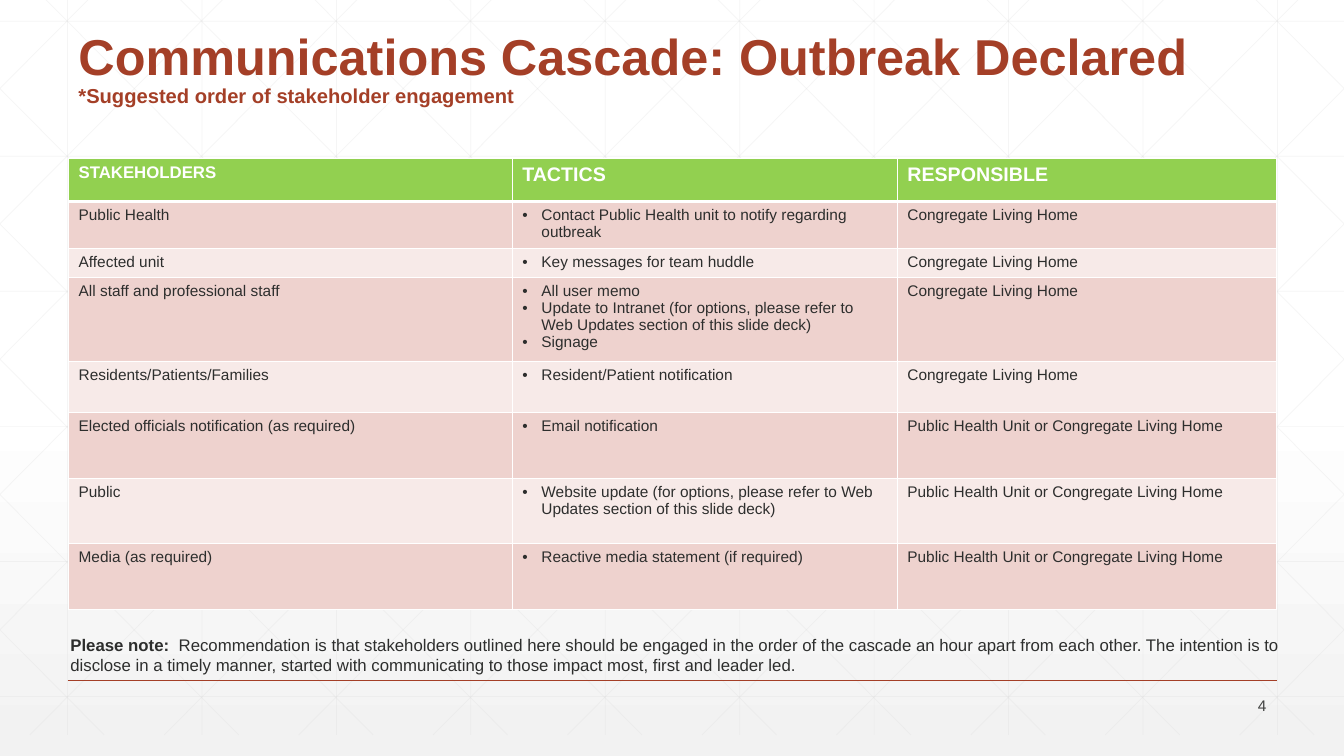
import pptx
import pptx.dml.color
import pptx.enum.shapes
import pptx.enum.text
import pptx.oxml
import pptx.oxml.ns
import pptx.util
from pptx.util import Inches

COLORS = {
    "rust": "A43F27", "green": "92D050", "white": "FFFFFF",
    "band_dark": "EED2CE", "band_light": "F7EAE8",
    "text": "2D2E2D", "number": "424342", "grid": "D9D9D9", "shade": "F2F2F2",
}
SLIDE_W, SLIDE_H = 13.33, 7.5
STEP = 4 / 3
LEFT, RIGHT = 0.67, 12.67
ANCHOR = pptx.enum.text.MSO_ANCHOR
NS = pptx.oxml.ns.nsdecls("a")

HEADER = [("STAKEHOLDERS", 12), ("TACTICS", 14), ("RESPONSIBLE", 14)]
HOME = "Congregate Living Home"
UNIT_OR_HOME = "Public Health Unit or Congregate Living Home"
CASCADE = [
    ("Public Health", ["Contact Public Health unit to notify regarding outbreak"], HOME),
    ("Affected unit", ["Key messages for team huddle"], HOME),
    ("All staff and professional staff",
     ["All user memo",
      "Update to Intranet (for options, please refer to Web Updates section of this slide deck)",
      "Signage"], HOME),
    ("Residents/Patients/Families", ["Resident/Patient notification"], HOME),
    ("Elected officials notification (as required)", ["Email notification"], UNIT_OR_HOME),
    ("Public",
     ["Website update (for options, please refer to Web Updates section of this slide deck)"],
     UNIT_OR_HOME),
    ("Media (as required)", ["Reactive media statement (if required)"], UNIT_OR_HOME),
]
COL_WIDTHS = [4.4, 3.82, 3.76]
ROW_HEIGHTS = [0.43, 0.43, 0.27, 0.83, 0.51, 0.65, 0.65, 0.65]
NOTE = ("Recommendation is that stakeholders outlined here should be engaged in the order of "
        "the cascade an hour apart from each other. The intention is to disclose in a timely "
        "manner, started with communicating to those impact most, first and leader led.")


def rgb(name):
    return pptx.dml.color.RGBColor.from_string(COLORS[name])


def add_run(p, text, size, color, bold=False):
    r = p.add_run()
    r.text = text
    formats = {"name": "Arial", "size": pptx.util.Pt(size), "bold": bold}
    for key, value in formats.items():
        setattr(r.font, key, value)
    r.font.color.rgb = rgb(color)


def add_text_box(s, box, anchor):
    tf = s.shapes.add_textbox(*map(Inches, box)).text_frame
    formats = {"word_wrap": True, "vertical_anchor": anchor}
    for key, value in formats.items():
        setattr(tf, key, value)
    return tf.paragraphs[0]


def add_line(s, start, end, color, width, alpha=None):
    line = s.shapes.add_connector(
        pptx.enum.shapes.MSO_CONNECTOR.STRAIGHT, *map(Inches, (*start, *end)))
    line.line.color.rgb = rgb(color)
    line.line.width = pptx.util.Pt(width)
    sp_pr = line._element.spPr
    if alpha is not None:
        clr = sp_pr.find(".//" + pptx.oxml.ns.qn("a:srgbClr"))
        clr.append(pptx.oxml.parse_xml(f'<a:alpha {NS} val="{alpha * 1000}"/>'))
    sp_pr.append(pptx.oxml.parse_xml(f"<a:effectLst {NS}/>"))


def set_background(s):
    """Fade from white to light grey down the lower half of the slide."""
    s.background.fill.gradient()
    grad = s.background._cSld.find(".//" + pptx.oxml.ns.qn("a:gradFill"))
    for child in list(grad):
        grad.remove(child)
    stops = [(0, "white", 100), (53, "white", 100), (100, "shade", 65)]
    gs = "".join(
        f'<a:gs pos="{pos * 1000}"><a:srgbClr val="{COLORS[name]}">'
        f'<a:alpha val="{alpha * 1000}"/></a:srgbClr></a:gs>' for pos, name, alpha in stops)
    grad.append(pptx.oxml.parse_xml(f"<a:gsLst {NS}>{gs}</a:gsLst>"))
    grad.append(pptx.oxml.parse_xml(f'<a:lin {NS} ang="5400000" scaled="0"/>'))


def add_grid(s, box):
    """Draw faint upright, level and mirrored diagonal lines, cut at the sides of the box."""
    left, top, width, height = box
    right, bottom = left + width, top + height
    style = ("grid", 0.5, 25)
    for i in range(10):
        x = LEFT + i * STEP
        add_line(s, (x, top), (x, bottom), *style)
    for i in range(6):
        y = top + 0.42 + i * 1.34
        add_line(s, (left, y), (right, y), *style)
    run = 7.45
    for i in range(-5, 10):
        x_top = left + 0.25 + i * STEP
        ends = [(x, top + (x - x_top) * height / run)
                for x in (max(left, x_top), min(right, x_top + run))]
        add_line(s, *ends, *style)
        add_line(s, *[(left + right - x, y) for x, y in ends], *style)


def add_title(s, box):
    p = add_text_box(s, box, ANCHOR.BOTTOM)
    p.line_spacing = 0.9
    add_run(p, "Communications Cascade: Outbreak Declared", 36, "rust", True)
    p.add_line_break()
    add_run(p, "*Suggested order of stakeholder engagement", 14.4, "rust", True)


def style_cell(cell, fill, bottom_width=1):
    tc_pr = cell._tc.get_or_add_tcPr()
    for side, width in zip("LRTB", (1, 1, 1, bottom_width)):
        tc_pr.append(pptx.oxml.parse_xml(
            f'<a:ln{side} {NS} w="{width * 12700}"><a:solidFill>'
            f'<a:srgbClr val="{COLORS["white"]}"/></a:solidFill></a:ln{side}>'))
    cell.fill.solid()
    cell.fill.fore_color.rgb = rgb(fill)


def add_bullet(p):
    p_pr = p._p.get_or_add_pPr()
    indent = Inches(0.19)
    p_pr.set("marL", str(indent))
    p_pr.set("indent", str(-indent))
    p_pr.append(pptx.oxml.parse_xml(f'<a:buFont {NS} typeface="Arial"/>'))
    p_pr.append(pptx.oxml.parse_xml(f'<a:buChar {NS} char="•"/>'))


def add_cascade_table(s, box):
    table = s.shapes.add_table(len(ROW_HEIGHTS), len(COL_WIDTHS), *map(Inches, box)).table
    for col, width in zip(table.columns, COL_WIDTHS):
        col.width = Inches(width)
    for row, height in zip(table.rows, ROW_HEIGHTS):
        row.height = Inches(height)
    for col, (label, size) in enumerate(HEADER):
        cell = table.cell(0, col)
        style_cell(cell, "green", 3)
        add_run(cell.text_frame.paragraphs[0], label, size, "white", True)
    for row, entry in enumerate(CASCADE, 1):
        for col, content in enumerate(entry):
            cell = table.cell(row, col)
            style_cell(cell, "band_dark" if row % 2 else "band_light")
            tf = cell.text_frame
            bulleted = isinstance(content, list)
            for i, text in enumerate(content if bulleted else [content]):
                p = tf.add_paragraph() if i else tf.paragraphs[0]
                if bulleted:
                    add_bullet(p)
                add_run(p, text, 11, "text")


def add_note(s, box):
    p = add_text_box(s, box, ANCHOR.TOP)
    add_run(p, "Please note:  ", 12, "text", True)
    add_run(p, NOTE, 12, "text")


def add_slide_number(s, box):
    p = add_text_box(s, box, ANCHOR.MIDDLE)
    p.alignment = pptx.enum.text.PP_ALIGN.RIGHT
    add_run(p, "4", 11, "number")


def main():
    prs = pptx.Presentation()
    prs.slide_width, prs.slide_height = Inches(SLIDE_W), Inches(SLIDE_H)
    s = prs.slides.add_slide(prs.slide_layouts[6])
    set_background(s)
    add_grid(s, (0, -0.21, SLIDE_W, 7.5))
    add_line(s, (LEFT, 6.75), (RIGHT, 6.75), "rust", 1)
    add_title(s, (0.68, 0, 11.5, 1.12))
    add_cascade_table(s, (0.68, 1.57, sum(COL_WIDTHS), sum(ROW_HEIGHTS)))
    add_slide_number(s, (11.66, 6.88, 1, 0.24))
    add_note(s, (0.6, 6.25, 12.73, 0.5))
    prs.save("out.pptx")


if __name__ == "__main__":
    main()
